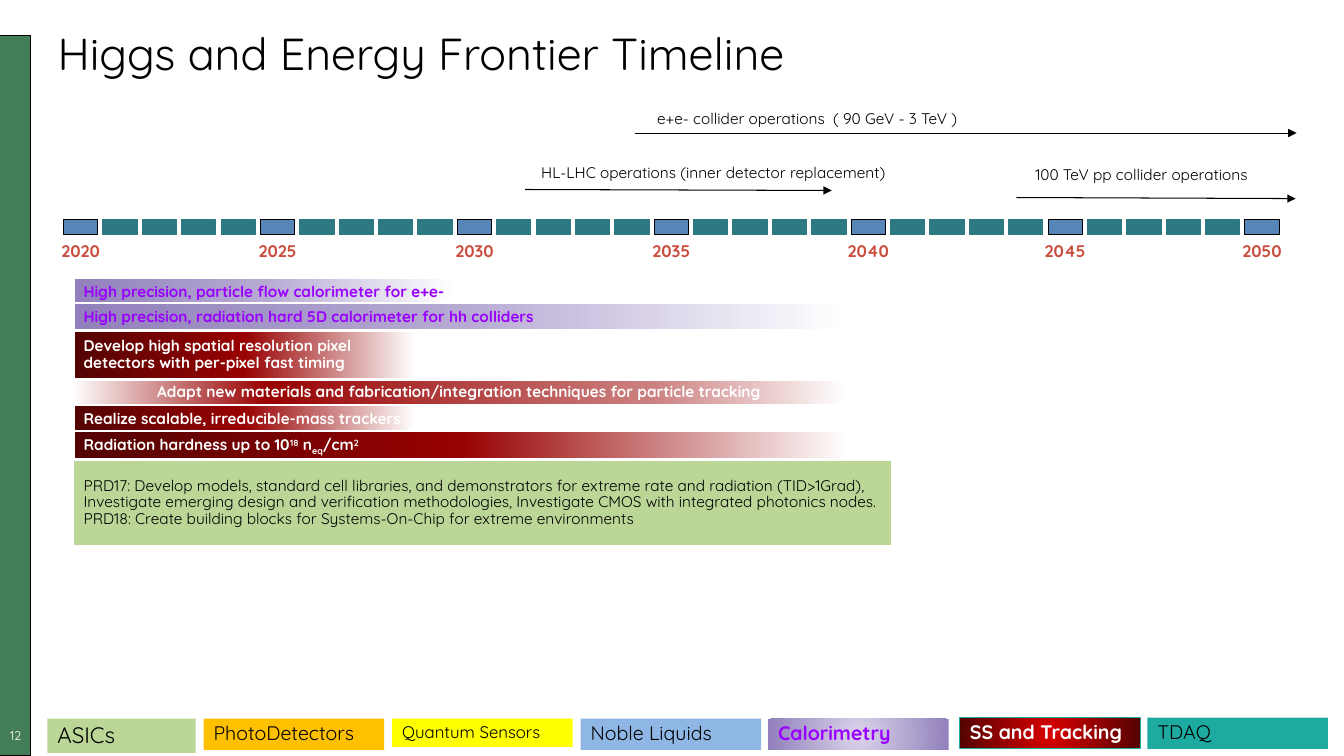
from lxml.etree import SubElement
from pptx import Presentation
from pptx.dml.color import RGBColor
from pptx.enum.shapes import MSO_CONNECTOR, MSO_SHAPE
from pptx.enum.text import MSO_ANCHOR, MSO_AUTO_SIZE, PP_ALIGN
from pptx.oxml import parse_xml
from pptx.oxml.ns import nsdecls, qn
from pptx.util import Inches, Pt

BLACK = RGBColor(0x00, 0x00, 0x00)
WHITE = RGBColor(0xFF, 0xFF, 0xFF)
FOREST = RGBColor(0x44, 0x7E, 0x59)
BLUE = RGBColor(0x57, 0x85, 0xB7)
PETROL = RGBColor(0x2C, 0x79, 0x81)
BRICK = RGBColor(0xCB, 0x4D, 0x3D)
VIOLET = RGBColor(0x99, 0x00, 0xFF)
LAVENDER = RGBColor(0xB6, 0xAA, 0xD3)
PALE_LAVENDER = RGBColor(0xDB, 0xD4, 0xEB)
PURPLE = RGBColor(0x91, 0x80, 0xBB)
PINK = RGBColor(0xCC, 0x81, 0x81)
CRIMSON = RGBColor(0x98, 0x02, 0x02)
RED = RGBColor(0xDB, 0x00, 0x00)
MAROON = RGBColor(0x54, 0x03, 0x03)
LIME = RGBColor(0xBB, 0xD6, 0x97)
ORANGE = RGBColor(0xFF, 0xC0, 0x00)
YELLOW = RGBColor(0xFF, 0xFF, 0x00)
SKY = RGBColor(0x8E, 0xB7, 0xE5)
TEAL = RGBColor(0x1D, 0xAB, 0xA1)

PURPLE_FADE = [(0, WHITE), (50, LAVENDER), (100, PURPLE)]
RED_FADE = [(0, WHITE), (50, CRIMSON), (100, MAROON)]
DOUBLE_FADE = [(0, WHITE), (25, PINK), (75, CRIMSON), (100, WHITE)]
PURPLE_GLOW = [(0, PALE_LAVENDER), (100, PURPLE)]
RED_GLOW = [(0, RED), (100, MAROON)]
LINEAR = '<a:lin ang="10800000" scaled="0"/>'
CIRCULAR = '<a:path path="circle"><a:fillToRect l="50000" t="50000" r="50000" b="50000"/></a:path>'

presentation = Presentation()
presentation.slide_width = Inches(13.33)
presentation.slide_height = Inches(7.5)
slide = presentation.slides.add_slide(presentation.slide_layouts[5])
shapes = slide.shapes
COLUMN = presentation.slide_width / 100
ROW = presentation.slide_height / 100


def write_text(shape, *paragraphs, size=11, color=BLACK, bold=False, align=PP_ALIGN.LEFT,
               anchor=MSO_ANCHOR.TOP, side=0.1, edge=0.05):
    frame = shape.text_frame
    frame.word_wrap = True
    frame.auto_size = MSO_AUTO_SIZE.NONE
    frame.vertical_anchor = anchor
    frame.margin_left = frame.margin_right = Inches(side)
    frame.margin_top = frame.margin_bottom = Inches(edge)
    for index, runs in enumerate(paragraphs):
        paragraph = frame.add_paragraph() if index else frame.paragraphs[0]
        paragraph.alignment = align
        paragraph.line_spacing = 0.9
        for text, baseline in [(runs, 0)] if isinstance(runs, str) else runs:
            run = paragraph.add_run()
            run.text = text
            run.font.name = "Quicksand"
            run.font.size = Pt(size)
            run.font.bold = bold
            run.font.color.rgb = color
            if baseline:
                run.font._element.set("baseline", str(baseline * 1000))


def add_box(left, top, width, height, fill, line=None, weight=0.75, shade=LINEAR):
    box = shapes.add_shape(MSO_SHAPE.RECTANGLE, int(left * COLUMN), int(top * ROW),
                           int(width * COLUMN), int(height * ROW))
    box.shadow.inherit = False
    if isinstance(fill, list):
        stops = "".join(f'<a:gs pos="{position * 1000}"><a:srgbClr val="{color}"/></a:gs>'
                        for position, color in fill)
        box._element.spPr.find(qn("a:prstGeom")).addnext(parse_xml(
            f'<a:gradFill {nsdecls("a")} rotWithShape="1"><a:gsLst>{stops}</a:gsLst>{shade}</a:gradFill>'))
    else:
        box.fill.solid()
        box.fill.fore_color.rgb = fill
    if line is None:
        box.line.fill.background()
    else:
        box.line.color.rgb = line
        box.line.width = Pt(weight)
    return box


add_box(0, 4.67, 2.25, 95.33, FOREST, BLACK)
page_number = shapes.add_textbox(0, int(96.53 * ROW), int(2.33 * COLUMN), int(2.27 * ROW))
write_text(page_number, "12", size=9, color=WHITE, align=PP_ALIGN.CENTER, side=0, edge=0)

title = shapes.title
title.left, title.top = int(3.53 * COLUMN), int(3.47 * ROW)
title.width, title.height = int(58.44 * COLUMN), int(14.8 * ROW)
write_text(title, "Higgs and Energy Frontier Timeline", size=32)

FIRST_YEAR, YEAR_PITCH, YEAR_WIDTH, LABEL_WIDTH = 4.73, 2.93, 2.55, 6.3
for index in range(31):
    year_left = FIRST_YEAR + index * YEAR_PITCH
    milestone = index % 5 == 0
    add_box(year_left, 29.07, YEAR_WIDTH, 2, BLUE if milestone else PETROL, BLACK if milestone else PETROL)
    if milestone:
        label_left = year_left + (YEAR_WIDTH - LABEL_WIDTH) / 2
        year_label = shapes.add_textbox(int(label_left * COLUMN), int(31.47 * ROW),
                                        int(LABEL_WIDTH * COLUMN), int(3.87 * ROW))
        write_text(year_label, str(2020 + index), size=12, color=BRICK, bold=True, align=PP_ALIGN.CENTER)

operations = [
    ("e+e- collider operations  ( 90 GeV - 3 TeV )", 48.16, 14, 32.7, (47.26, 17.6, 96.47, 17.6)),
    ("HL-LHC operations (inner detector replacement)", 39.53, 21.2, 31.13, (39.08, 25.07, 61.89, 25.2)),
    ("100 TeV pp collider operations", 76.29, 21.47, 21.08, (75.62, 26.13, 96.4, 26.27)),
]
for text, left, top, width, (start_x, start_y, end_x, end_y) in operations:
    label = shapes.add_textbox(int(left * COLUMN), int(top * ROW), int(width * COLUMN), int(3.6 * ROW))
    write_text(label, text)
    arrow = shapes.add_connector(MSO_CONNECTOR.STRAIGHT, int(start_x * COLUMN), int(start_y * ROW),
                                 int(end_x * COLUMN), int(end_y * ROW))
    arrow.line.color.rgb = BLACK
    arrow.line.width = Pt(0.75)
    SubElement(arrow.line._get_or_add_ln(), qn("a:tailEnd"), type="triangle")
    SubElement(arrow._element.spPr, qn("a:effectLst"))

hardness = [("Radiation hardness up to 10", 0), ("18", 30), (" n", 0), ("eq", -25), ("/cm", 0), ("2", 30)]
tasks = [
    ("High precision, particle flow calorimeter for e+e-", 5.48, 36.8, 28.43, 3.73, PURPLE_FADE, VIOLET),
    ("High precision, radiation hard 5D calorimeter for hh colliders", 5.48, 40.13, 57.69, 3.6,
     PURPLE_FADE, VIOLET),
    ("Realize scalable, irreducible-mass trackers", 5.48, 53.6, 25.43, 3.87, RED_FADE, WHITE),
    ("Adapt new materials and fabrication/integration techniques for particle tracking",
     5.33, 50.27, 57.69, 3.33, DOUBLE_FADE, WHITE),
    ("Develop high spatial resolution pixel detectors with per-pixel fast timing",
     5.48, 43.73, 25.43, 6.4, RED_FADE, WHITE),
    (hardness, 5.48, 57.07, 57.69, 3.6, RED_FADE, WHITE),
]
for text, left, top, width, height, fill, color in tasks:
    bar = add_box(left, top, width, height, fill, WHITE, weight=1.5)
    write_text(bar, text, color=color, bold=True, anchor=MSO_ANCHOR.MIDDLE, edge=0.1,
               align=PP_ALIGN.CENTER if fill is DOUBLE_FADE else PP_ALIGN.LEFT)

research_directions = add_box(5.48, 60.93, 60.84, 11.2, LIME, WHITE)
write_text(
    research_directions,
    "PRD17: Develop models, standard cell libraries, and demonstrators for extreme rate and radiation "
    "(TID>1Grad), Investigate emerging design and verification methodologies, Investigate CMOS with "
    "integrated photonics nodes.",
    "PRD18: Create building blocks for Systems-On-Chip for extreme environments",
    anchor=MSO_ANCHOR.MIDDLE, edge=0.1)

legend = [
    ("ASICs", 3.53, 95.07, 11.03, 4.53, LIME, None, 16, BLACK),
    ("PhotoDetectors", 15.15, 95.07, 13.43, 4.13, ORANGE, None, 14, BLACK),
    ("Quantum Sensors", 29.18, 95.07, 13.43, 3.73, YELLOW, None, 12, BLACK),
    ("Noble Liquids", 43.21, 95.07, 13.43, 4.13, SKY, None, 14, BLACK),
    ("Calorimetry", 57.16, 95.07, 13.43, 4.13, PURPLE_GLOW, None, 14, VIOLET),
    ("SS and Tracking", 71.42, 94.93, 13.43, 4.13, RED_GLOW, TEAL, 14, WHITE),
    ("TDAQ", 85.37, 94.93, 13.43, 4.13, TEAL, None, 14, BLACK),
]
for text, left, top, width, height, fill, line, size, color in legend:
    key = add_box(left, top, width, height, fill, line, shade=CIRCULAR)
    write_text(key, text, size=size, color=color, bold=color != BLACK)

presentation.save("out.pptx")
